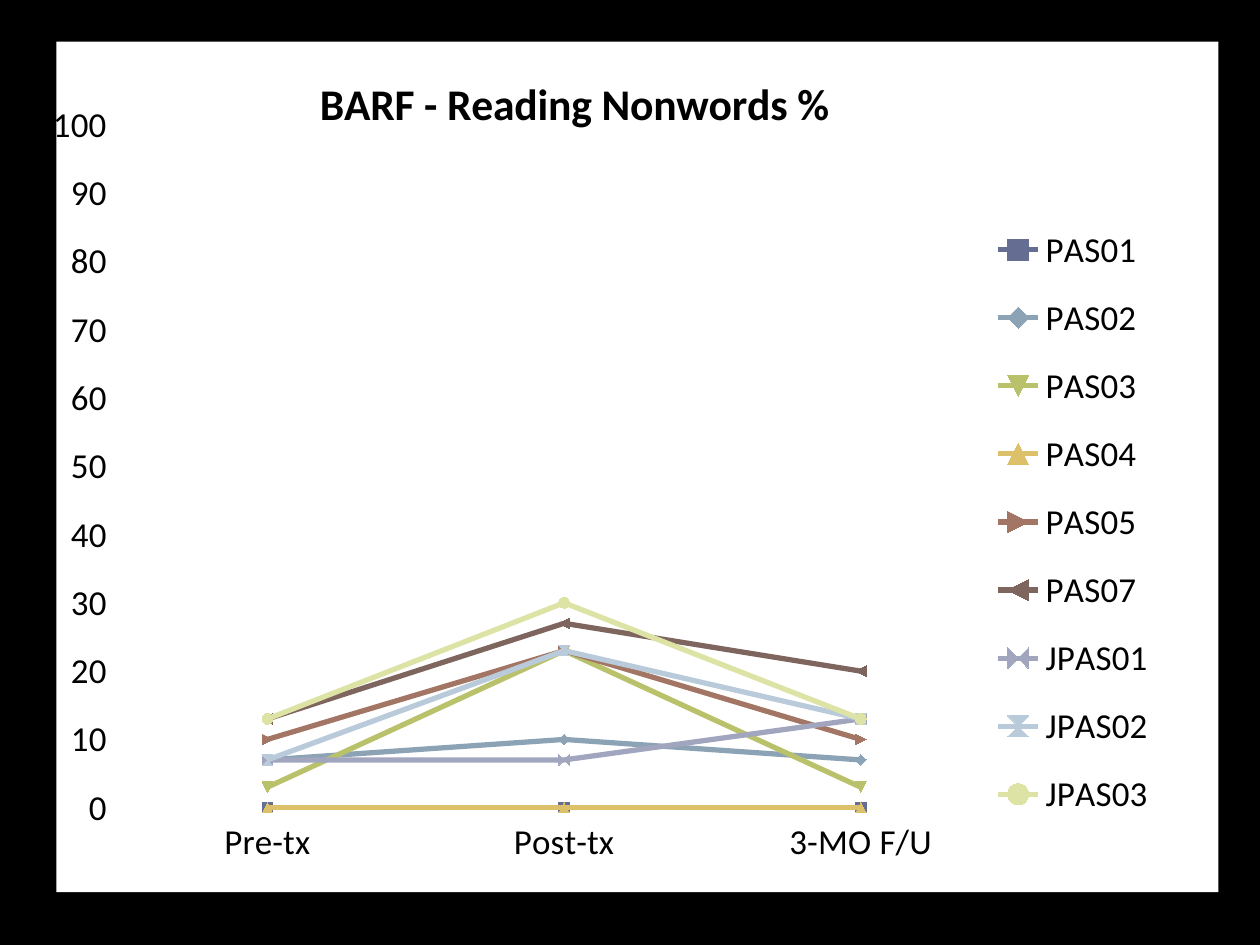
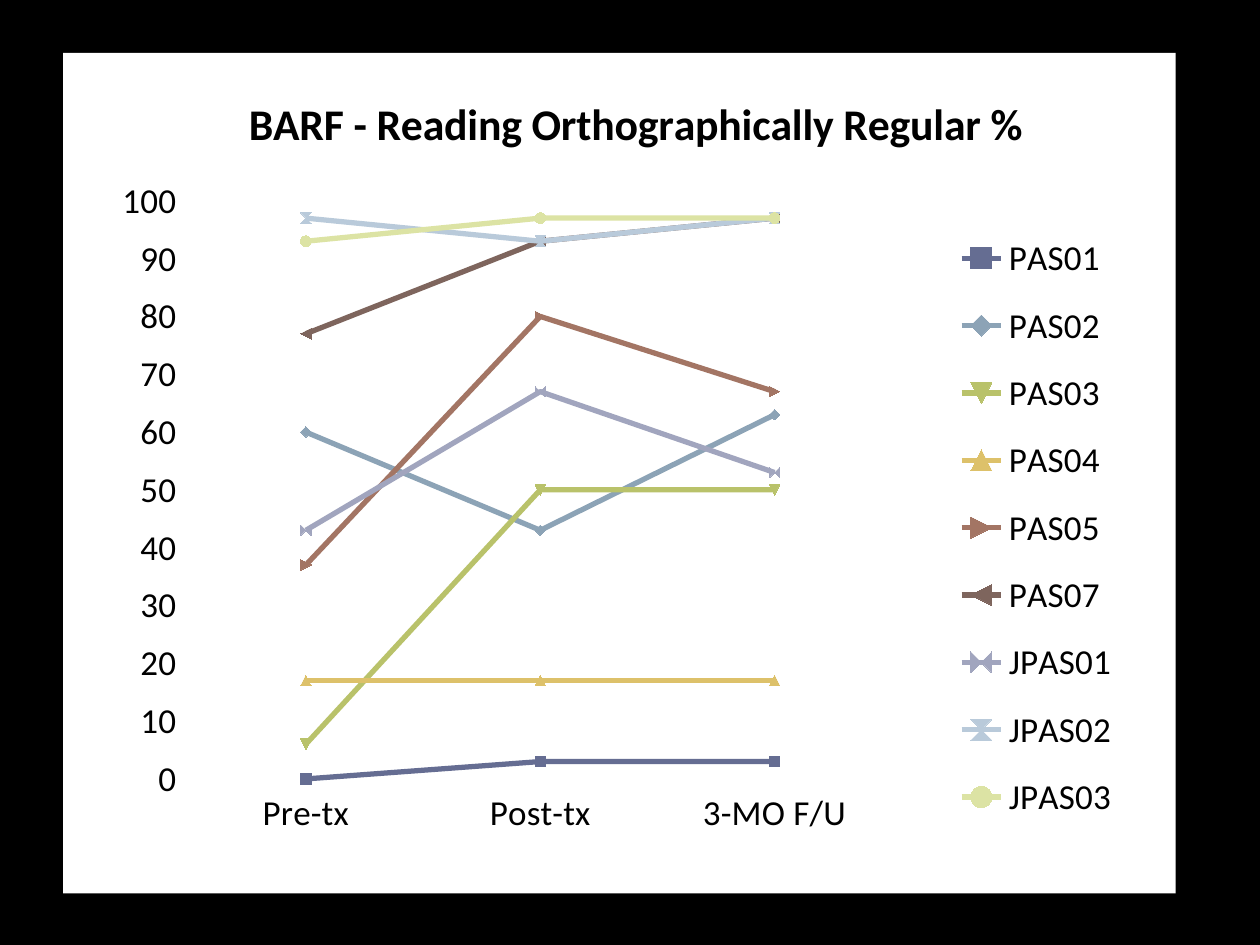
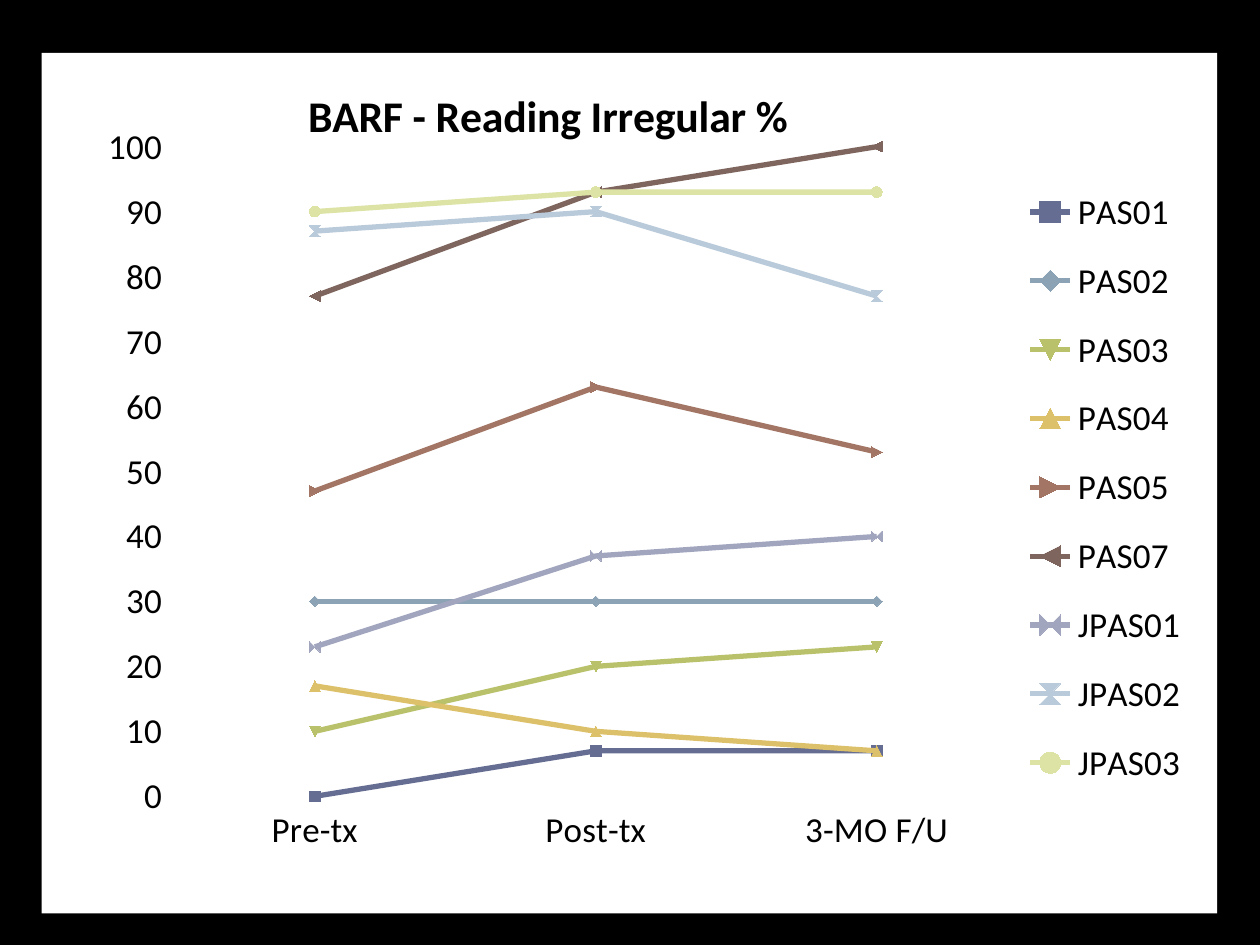
from lxml.etree import SubElement
from pptx import Presentation
from pptx.chart.data import CategoryChartData
from pptx.dml.color import RGBColor
from pptx.enum.chart import XL_CHART_TYPE, XL_LEGEND_POSITION, XL_TICK_MARK
from pptx.oxml import parse_xml
from pptx.oxml.ns import nsdecls, qn
from pptx.util import Inches, Pt

FONT = "Calibri"
BLACK = RGBColor(0x00, 0x00, 0x00)
SERIES_COLORS = {
    "PAS01": RGBColor(0x65, 0x6D, 0x92),
    "PAS02": RGBColor(0x8C, 0xA3, 0xB6),
    "PAS03": RGBColor(0xB9, 0xC2, 0x6A),
    "PAS04": RGBColor(0xDD, 0xC1, 0x6A),
    "PAS05": RGBColor(0xA3, 0x75, 0x64),
    "PAS07": RGBColor(0x7E, 0x65, 0x5D),
    "JPAS01": RGBColor(0xA1, 0xA5, 0xBE),
    "JPAS02": RGBColor(0xB9, 0xCA, 0xDA),
    "JPAS03": RGBColor(0xDC, 0xE3, 0xA4),
}
PHASES = ["Pre-tx", "Post-tx", "3-MO F/U"]

# Frames are in inches; layouts are fractions of the chart (x, y, width, height).
# Each row of scores belongs to one participant, in the order of SERIES_COLORS.
CHARTS = [
    {
        "title": "BARF - Reading Nonwords %",
        "frame": (0.42, 0.33, 9.25, 6.75),
        "title_layout": (0.22, 0.03),
        "plot_layout": (0.054, 0.098, 0.766, 0.803),
        "legend_layout": (0.8, 0.19, 0.15, 0.75),
        "scores": [(0, 0, 0), (7, 10, 7), (3, 23, 3), (0, 0, 0), (10, 23, 10),
                   (13, 27, 20), (7, 7, 13), (7, 23, 13), (13, 30, 13)],
    },
    {
        "title": "BARF - Reading Orthographically Regular %",
        "frame": (0.5, 0.42, 8.83, 6.67),
        "title_layout": (0.16, 0.04),
        "plot_layout": (0.113, 0.176, 0.632, 0.688),
        "legend_layout": (0.8, 0.19, 0.15, 0.75),
        "scores": [(0, 3, 3), (60, 43, 63), (6, 50, 50), (17, 17, 17), (37, 80, 67),
                   (77, 93, 97), (43, 67, 53), (97, 93, 97), (93, 97, 97)],
    },
    {
        "title": "BARF - Reading Irregular %",
        "frame": (0.33, 0.42, 9.33, 6.83),
        "title_layout": (0.22, 0.03),
        "plot_layout": (0.113, 0.109, 0.717, 0.755),
        "legend_layout": (0.83, 0.13, 0.15, 0.75),
        "scores": [(0, 7, 7), (30, 30, 30), (10, 20, 23), (17, 10, 7), (47, 63, 53),
                   (77, 93, 100), (23, 37, 40), (87, 90, 77), (90, 93, 93)],
    },
]


def style_font(font, size, bold=False):
    font.name, font.size, font.bold = FONT, Pt(size), bold
    font.color.rgb = BLACK


def place(element, fractions, inner=False):
    """Give a chart part a fixed position and, if stated, a fixed size."""
    for old_layout in element.findall(qn("c:layout")):
        element.remove(old_layout)
    layout = parse_xml(f"<c:layout {nsdecls('c')}/>")
    manual = SubElement(layout, qn("c:manualLayout"))
    settings = [("layoutTarget", "inner")] if inner else []
    settings += [("xMode", "edge"), ("yMode", "edge"), *zip("xywh", fractions)]
    for name, value in settings:
        SubElement(manual, qn(f"c:{name}")).set("val", str(value))
    overlay = element.find(qn("c:overlay"))
    if overlay is None:
        element.insert(0, layout)
    else:
        overlay.addprevious(layout)


def fill_white(chart):
    chart_element = chart.element.find(qn("c:chart"))
    chart_element.addnext(parse_xml(
        f"<c:spPr {nsdecls('c', 'a')}><a:solidFill><a:srgbClr val='FFFFFF'/></a:solidFill>"
        "<a:ln><a:noFill/></a:ln></c:spPr>"))


def add_score_chart(slide, content):
    data = CategoryChartData()
    data.categories = PHASES
    for name, scores in zip(SERIES_COLORS, content["scores"]):
        data.add_series(name, scores)
    frame = [Inches(length) for length in content["frame"]]
    chart = slide.shapes.add_chart(XL_CHART_TYPE.LINE_MARKERS, *frame, data).chart
    style_font(chart.font, 10)
    fill_white(chart)

    # Title
    chart.has_title = True
    run = chart.chart_title.text_frame.paragraphs[0].add_run()
    run.text = content["title"]
    style_font(run.font, 25, bold=True)
    place(chart.chart_title._element, content["title_layout"])

    # Legend
    chart.has_legend = True
    chart.legend.position = XL_LEGEND_POSITION.RIGHT
    chart.legend.include_in_layout = False
    style_font(chart.legend.font, 20)
    place(chart.legend._element, content["legend_layout"])

    # Axes, with their lines hidden
    for axis in (chart.category_axis, chart.value_axis):
        style_font(axis.tick_labels.font, 20)
        axis.major_tick_mark = XL_TICK_MARK.OUTSIDE
        axis.format.line.fill.background()
    scale = chart.value_axis
    scale.minimum_scale, scale.maximum_scale, scale.major_unit = 0, 100, 10
    scale.has_major_gridlines = True
    scale.major_gridlines.format.line.fill.background()

    # Lines
    plot = chart.plots[0]
    plot.vary_by_categories = False
    place(chart.element.find(".//" + qn("c:plotArea")), content["plot_layout"], inner=True)
    for series, color in zip(plot.series, SERIES_COLORS.values()):
        series.smooth = False
        series.format.line.width = Pt(3)
        series.format.line.color.rgb = color
        series.marker.size = 6
        series.marker.format.fill.solid()
        series.marker.format.fill.fore_color.rgb = color
        series.marker.format.line.color.rgb = color


def main():
    presentation = Presentation()
    presentation.slide_width, presentation.slide_height = Inches(10), Inches(7.5)
    for content in CHARTS:
        slide = presentation.slides.add_slide(presentation.slide_layouts[6])
        slide.background.fill.solid()
        slide.background.fill.fore_color.rgb = BLACK
        add_score_chart(slide, content)
    presentation.save("out.pptx")


if __name__ == "__main__":
    main()
